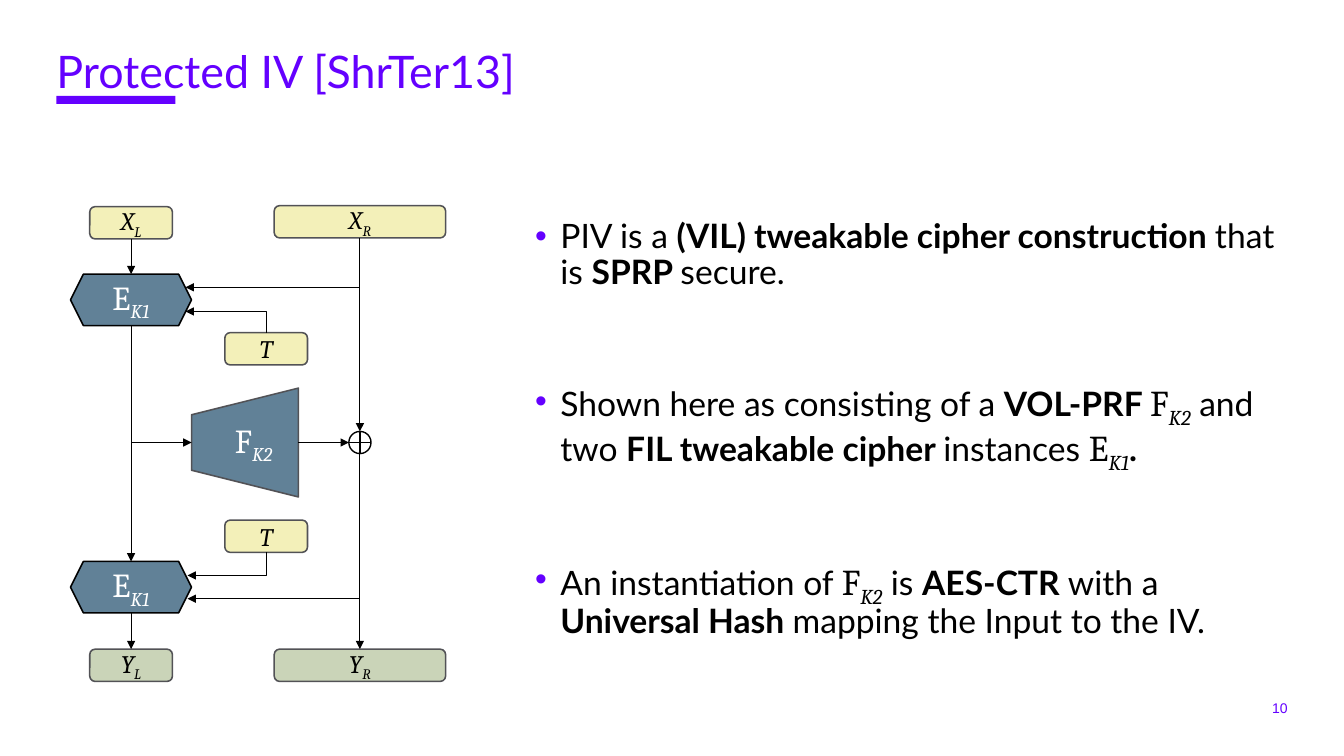
from lxml.etree import SubElement
from pptx import Presentation
from pptx.dml.color import RGBColor
from pptx.enum.shapes import MSO_CONNECTOR as LINE, MSO_SHAPE as SHAPE
from pptx.enum.text import MSO_ANCHOR, PP_ALIGN
from pptx.oxml.ns import qn
from pptx.util import Pt

PX = 9144  # 100 px to the inch
INK = {"violet": "6400FF", "black": "000000", "white": "FFFFFF", "steel": "618197",
       "grey": "525256", "cream": "F3F0B9", "sage": "CAD4B8"}

deck = Presentation()
deck.slide_width, deck.slide_height = 1333 * PX, 750 * PX
slide = deck.slides.add_slide(deck.slide_layouts[6])
shapes = slide.shapes


def color(name):
    return RGBColor.from_string(INK[name])


def write(shape, paras, size=24, font="Lato", ink="black", align=PP_ALIGN.LEFT,
          anchor=MSO_ANCHOR.TOP, inset=0, lead=1.0, gap=0, math=24, dot=None):
    """Fill a shape with paragraphs of (text, style) runs.

    Styles: b bold, i italic, m math letter, s math subscript.
    """
    frame = shape.text_frame
    frame.word_wrap, frame.vertical_anchor = True, anchor
    frame.margin_left = frame.margin_right = inset * 2 * PX
    frame.margin_top = frame.margin_bottom = inset * PX
    for n, runs in enumerate(paras):
        para = frame.add_paragraph() if n else frame.paragraphs[0]
        para.alignment, para.line_spacing = align, lead
        para.space_before = Pt(gap if n else 0)
        if dot:
            props = para._p.get_or_add_pPr()
            props.set("marL", str(25 * PX))
            props.set("indent", str(-25 * PX))
            SubElement(SubElement(props, qn("a:buClr")), qn("a:srgbClr"), val=INK[dot])
            SubElement(props, qn("a:buFont"), typeface="Arial")
            SubElement(props, qn("a:buChar"), char="•")
        for text, style in runs:
            run = para.add_run()
            run.text = text
            face = run.font
            is_math = style in ("m", "s")
            face.name = "Cambria" if is_math else font
            face.size = Pt(math if is_math else size)
            face.bold, face.italic = style == "b", style in ("i", "s")
            face.color.rgb = color(ink)
            if style == "s":
                run._r.get_or_add_rPr().set("baseline", "-25000")


# Title and page number
bar = shapes.add_shape(SHAPE.RECTANGLE, 56 * PX, 95 * PX, 118 * PX, 8 * PX)
bar.shadow.inherit = False
bar.fill.solid()
bar.fill.fore_color.rgb = color("violet")
bar.line.fill.background()

title = shapes.add_textbox(56 * PX, 49 * PX, 956 * PX, 68 * PX)
write(title, [[("Protected IV [ShrTer13]", "")]], size=32, ink="violet", lead=0.9)
page = shapes.add_textbox(1233 * PX, 694 * PX, 44 * PX, 16 * PX)
write(page, [[("10", "")]], size=10, font="Arial", ink="violet",
      align=PP_ALIGN.RIGHT, anchor=MSO_ANCHOR.MIDDLE)

# Bullets
points = [
    [("PIV is a ", ""), ("(VIL) tweakable cipher construction ", "b"),
     ("that is ", ""), ("SPRP ", "b"), ("secure.", "")],
    [("Shown here as consisting of a ", ""), ("VOL-PRF ", "b"), ("F", "m"), ("K2", "s"),
     (" and two ", ""), ("FIL tweakable cipher ", "b"), ("instances ", ""),
     ("E", "m"), ("K1", "s"), (".", "b")],
    [("An instantiation of ", ""), ("F", "m"), ("K2", "s"), (" is ", ""),
     ("AES-CTR ", "b"), ("with a ", ""), ("Universal Hash ", "b"),
     ("mapping the Input to the IV.", "")],
]
body = shapes.add_textbox(521 * PX, 213 * PX, 756 * PX, 481 * PX)
write(body, points, inset=5, lead=0.9, gap=63.5, math=26, dot="violet")

# Diagram nodes: name, shape, left, top, width, height, fill, line, text ink, size, runs
LEFT, RIGHT, MID = 130, 357, 439
nodes = [
    ("E1", SHAPE.HEXAGON, 70, 272, 120, 51, "steel", "black", "white", 24,
     [("E", "m"), ("K1", "s")]),
    ("E2", SHAPE.HEXAGON, 70, 557, 120, 51, "steel", "black", "white", 24,
     [("E", "m"), ("K1", "s")]),
    ("F", SHAPE.TRAPEZOID, 189, 386, 108, 106, "steel", "grey", "white", 24,
     [("F", "m"), ("K2", "s")]),
    ("xor", SHAPE.FLOWCHART_OR, RIGHT - 11, MID - 11, 22, 22, None, "black", "black", 18, []),
]
for name, mid, top, width, fill, runs in [
    ("XL", LEFT, 205, 82, "cream", [("X", "i"), ("L", "s")]),
    ("XR", RIGHT, 204, 170, "cream", [("X", "i"), ("R", "s")]),
    ("T1", 264, 330, 82, "cream", [("T", "i")]),
    ("T2", 264, 516, 82, "cream", [("T", "i")]),
    ("YL", LEFT, 644, 82, "sage", [("Y", "i"), ("L", "s")]),
    ("YR", RIGHT, 644, 170, "sage", [("Y", "i"), ("R", "s")]),
]:
    nodes.append((name, SHAPE.ROUNDED_RECTANGLE, mid - width // 2, top, width, 32,
                  fill, "grey", "black", 18, runs))

node = {}
for name, kind, left, top, width, height, fill, edge, ink, size, runs in nodes:
    shape = shapes.add_shape(kind, left * PX, top * PX, width * PX, height * PX)
    shape.shadow.inherit = False
    if fill:
        shape.fill.solid()
        shape.fill.fore_color.rgb = color(fill)
    else:
        shape.fill.background()
    shape.line.color.rgb = color(edge)
    shape.line.width = Pt(1.1 if fill else 1)
    if runs:
        write(shape, [runs], size=size, math=size, font="Cambria", ink=ink,
              align=PP_ALIGN.CENTER, anchor=MSO_ANCHOR.MIDDLE)
    node[name] = shape

# The trapezoid lies on its side; its text is turned back upright
node["F"].rotation = 270
node["F"].text_frame._txBody.bodyPr.set("vert", "vert")

# Arrows: start, end, (node, side) joined at the start, at the end
TOP, BOTTOM = 0, 2
arrows = [
    ((LEFT, 237), (LEFT, 272), ("XL", BOTTOM), None),
    ((LEFT, 323), (LEFT, 557), None, None),
    ((LEFT, 608), (LEFT, 644), None, ("YL", TOP)),
    ((RIGHT, 236), (RIGHT, MID - 11), ("XR", BOTTOM), None),
    ((RIGHT, MID + 11), (RIGHT, 644), None, ("YR", TOP)),
    ((LEFT, MID), (190, MID), None, None),
    ((296, MID), (RIGHT - 11, MID), None, None),
    ((RIGHT, 285), (184, 285), None, None),
    ((RIGHT, 594), (186, 594), None, None),
    # Bent arrows run from the cipher to the tweak, with the head at the start
    ((184, 309), (264, 330), None, ("T1", TOP)),
    ((186, 571), (264, 548), None, ("T2", BOTTOM)),
]
for start, end, tail, head in arrows:
    bent = start[0] != end[0] and start[1] != end[1]
    link = shapes.add_connector(LINE.ELBOW if bent else LINE.STRAIGHT,
                                *(v * PX for v in start + end))
    if tail:
        link.begin_connect(node[tail[0]], tail[1])
    if head:
        link.end_connect(node[head[0]], head[1])
    link.line.color.rgb = color("black")
    link.line.width = Pt(0.75)
    props = link._element.spPr
    if bent:
        props.find(qn("a:prstGeom")).set("prst", "bentConnector2")
    SubElement(props.find(qn("a:ln")), qn("a:headEnd" if bent else "a:tailEnd"),
               type="triangle")
    SubElement(props, qn("a:effectLst"))

deck.save("out.pptx")
